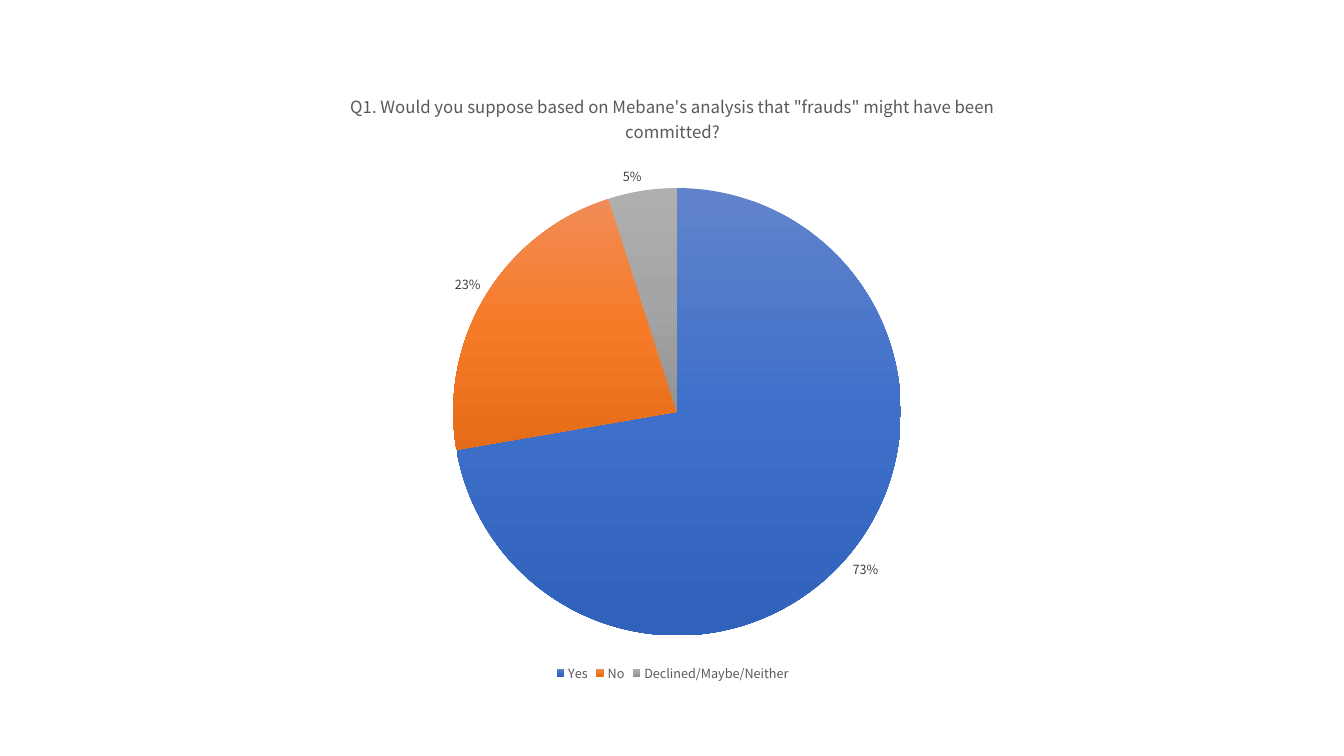
"""Build a slide with one pie chart of survey answers."""
from lxml import etree
from pptx import Presentation
from pptx import util as u
from pptx.chart.data import CategoryChartData
from pptx.dml.color import RGBColor
from pptx.enum import chart as kinds
from pptx.oxml import parse_xml
from pptx.oxml.ns import nsdecls, qn

FONT = "Noto Sans CJK KR"
QUESTION = ("Q1. Would you suppose based on Mebane's analysis "
            "that \"frauds\" might have been committed?")
ANSWERS = {
    "Yes": (0.73, ("6183CB", "3E70CA", "3062BB")),
    "No": (0.23, ("F18C57", "F67B28", "E56C19")),
    "Declined/Maybe/Neither": (0.05, ("AFAFAF", "A5A5A5", "939393")),
}


def color(value):
    """Return the colour for a hex string."""
    return RGBColor.from_string(value)


def style_font(font, size, shade):
    """Set the face, size and colour of a font."""
    font.name = FONT
    font.size = u.Pt(size)
    font.bold = False
    font.color.rgb = color(shade)


def write_title(chart, content, *, size, shade):
    """Give the chart a title above the plot."""
    frame = chart.chart_title.text_frame
    frame.text = content
    style_font(frame.paragraphs[0].runs[0].font, size, shade)
    chart.chart_title.include_in_layout = False


def fill_gradient(point, shades):
    """Fill a slice from top to bottom with evenly spaced shades."""
    step = 100000 // (len(shades) - 1)
    stops = "".join(
        f'<a:gs pos="{index * step}"><a:srgbClr val="{shade}"/></a:gs>'
        for index, shade in enumerate(shades))
    point.format.line.fill.background()
    properties = point.format.line._get_or_add_ln().getparent()
    properties.insert(0, parse_xml(
        f'<a:gradFill {nsdecls("a")} rotWithShape="1"><a:gsLst>{stops}</a:gsLst>'
        '<a:lin ang="5400000" scaled="0"/></a:gradFill>'))


def place_plot(chart, **fractions):
    """Set the inner plot area as fractions of the chart."""
    area = chart._chartSpace.chart.plotArea
    for old in area.findall(qn("c:layout")):
        area.remove(old)
    layout = etree.Element(qn("c:layout"))
    manual = etree.SubElement(layout, qn("c:manualLayout"))
    settings = {"layoutTarget": "inner", "xMode": "edge", "yMode": "edge", **fractions}
    for name, value in settings.items():
        etree.SubElement(manual, qn(f"c:{name}")).set("val", str(value))
    area.insert(0, layout)


def add_labels(plot, *, size, shade):
    """Show the values as percentages outside the slices."""
    plot.has_data_labels = True
    labels = plot.data_labels
    labels.show_value = True
    labels.show_percentage = False
    labels.number_format = "0%"
    labels.number_format_is_linked = False
    labels.position = kinds.XL_LABEL_POSITION.OUTSIDE_END
    style_font(labels.font, size, shade)


def add_legend(chart, *, size, shade):
    """Put a legend under the plot."""
    chart.has_legend = True
    chart.legend.position = kinds.XL_LEGEND_POSITION.BOTTOM
    chart.legend.include_in_layout = False
    style_font(chart.legend.font, size, shade)


def add_pie(page, left, top, width, height):
    """Add the pie chart of answers to the page."""
    data = CategoryChartData(number_format="0%")
    data.categories = list(ANSWERS)
    data.add_series(QUESTION, [share for share, _ in ANSWERS.values()])
    chart = page.shapes.add_chart(
        kinds.XL_CHART_TYPE.PIE, u.Inches(left), u.Inches(top),
        u.Inches(width), u.Inches(height), data).chart
    style_font(chart.font, 10, "000000")
    write_title(chart, QUESTION, size=12, shade="595959")
    place_plot(chart, x=0.26, y=0.19, w=0.49, h=0.73)
    plot = chart.plots[0]
    plot.vary_by_categories = True
    for index, (_, shades) in enumerate(ANSWERS.values()):
        fill_gradient(plot.series[0].points[index], shades)
    add_labels(plot, size=9, shade="404040")
    add_legend(chart, size=9, shade="595959")


def main():
    """Create the deck and save it."""
    deck = Presentation()
    deck.slide_width = u.Inches(13.33)
    deck.slide_height = u.Inches(7.5)
    page = deck.slides.add_slide(deck.slide_layouts[6])
    add_pie(page, 2.14, 0.7, 9.06, 6.1)
    deck.save("out.pptx")


if __name__ == "__main__":
    main()
